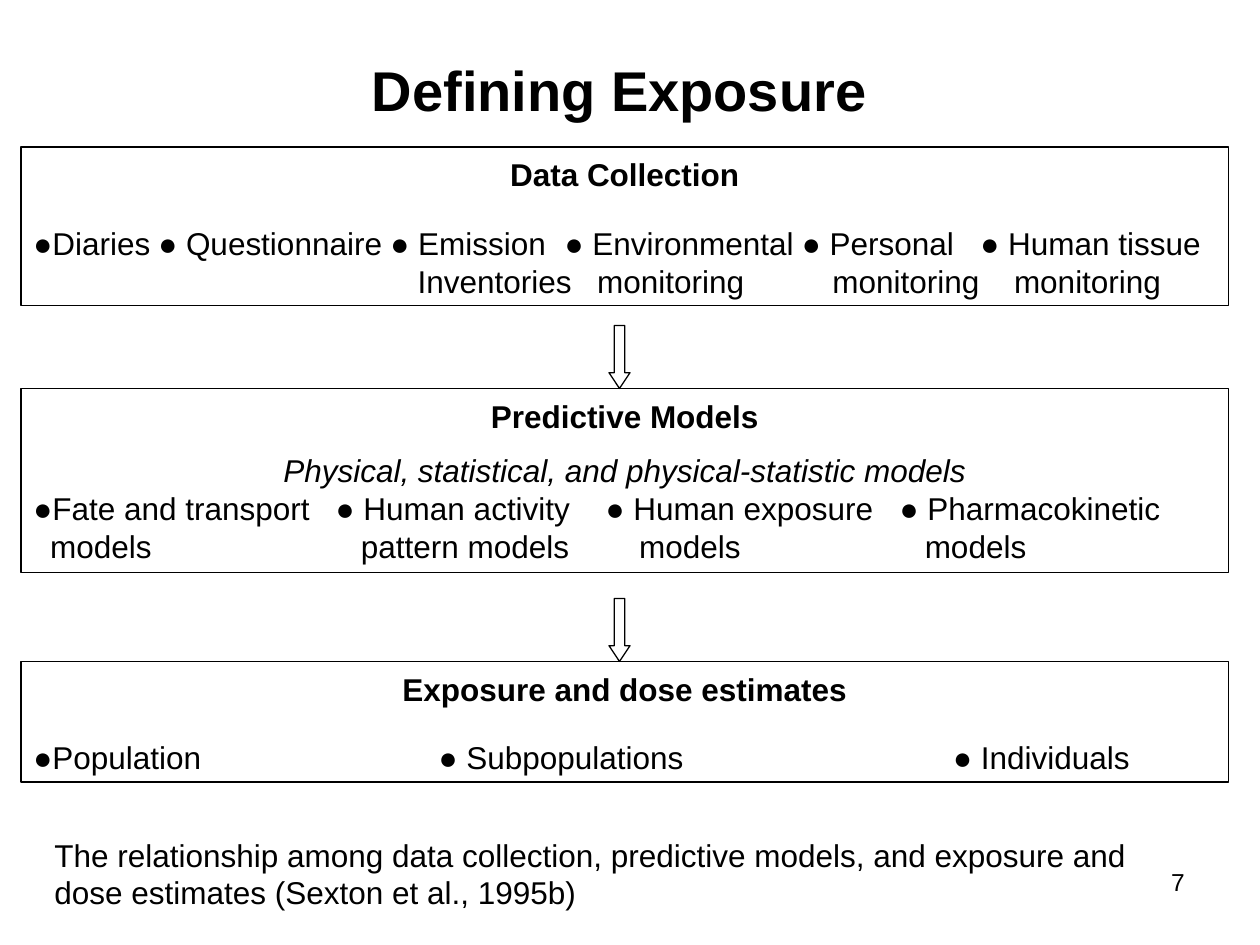
from dataclasses import dataclass

from lxml import etree
from pptx import Presentation
from pptx.dml.color import RGBColor
from pptx.enum import shapes, text
from pptx.oxml import ns
from pptx.util import Pt

PX = 7620  # EMU per px, 120 px to the inch


@dataclass(frozen=True)
class Theme:
    font: str = "Arial"
    ink: RGBColor = RGBColor(0, 0, 0)
    title: int = 32
    body: int = 18
    number: int = 14
    line: float = 0.75


THEME = Theme()
ALIGN = text.PP_ALIGN
BOX_LEFT, BOX_WIDTH = 20, 1150
ARROW_LEFT, ARROW_WIDTH, ARROW_HEIGHT = 580, 20, 60


@dataclass(frozen=True)
class Line:
    """One paragraph; tabs are px from the left edge of the text."""
    words: str
    tabs: tuple = ()
    align: object = ALIGN.LEFT
    before: float = 0
    size: int = THEME.body
    bold: bool = False
    italic: bool = False


def heading(words):
    return Line(words, align=ALIGN.CENTER, bold=True)


def items(*words, tabs, before=0):
    return Line("\t".join(words), tabs=tabs, before=before)


def px(*lengths):
    return [length * PX for length in lengths]


def add_tabs(paragraph, stops):
    tab_list = etree.SubElement(paragraph._p.get_or_add_pPr(), ns.qn("a:tabLst"))
    for stop in stops:
        etree.SubElement(tab_list, ns.qn("a:tab"), pos=str(stop * PX), algn="l")


def write(frame, lines, anchor=text.MSO_ANCHOR.TOP, top=6):
    frame_format = {
        "word_wrap": True, "vertical_anchor": anchor,
        "margin_left": 12 * PX, "margin_right": 12 * PX,
        "margin_top": top * PX, "margin_bottom": 6 * PX,
    }
    for name, value in frame_format.items():
        setattr(frame, name, value)
    for index, line in enumerate(lines):
        paragraph = frame.add_paragraph() if index else frame.paragraphs[0]
        paragraph.alignment = line.align
        if line.before:
            paragraph.space_before = Pt(line.before)
        if line.tabs:
            add_tabs(paragraph, line.tabs)
        run = paragraph.add_run()
        run.text = line.words
        run.font.color.rgb = THEME.ink
        run_format = {"name": THEME.font, "size": Pt(line.size),
                      "bold": line.bold, "italic": line.italic}
        for name, value in run_format.items():
            setattr(run.font, name, value)


def add_outline(slide, kind, *bounds):
    shape = slide.shapes.add_shape(kind, *px(*bounds))
    shape.shadow.inherit = False
    shape.fill.background()
    shape.line.color.rgb = THEME.ink
    shape.line.width = Pt(THEME.line)
    return shape


def add_box(slide, top, height, lines):
    box = add_outline(slide, shapes.MSO_SHAPE.RECTANGLE,
                      BOX_LEFT, top, BOX_WIDTH, height)
    write(box.text_frame, lines, top=8)


def add_arrow_to(slide, box_top):
    arrow = add_outline(slide, shapes.MSO_SHAPE.DOWN_ARROW, ARROW_LEFT,
                        box_top - ARROW_HEIGHT, ARROW_WIDTH, ARROW_HEIGHT)
    arrow.adjustments[0] = 0.5
    arrow.adjustments[1] = 0.75


def add_label(slide, bounds, line):
    write(slide.shapes.add_textbox(*px(*bounds)).text_frame, [line])


def set_title(slide, bounds, words):
    title = slide.shapes.title
    title.left, title.top, title.width, title.height = px(*bounds)
    write(title.text_frame,
          [Line(words, align=ALIGN.CENTER, size=THEME.title, bold=True)],
          anchor=text.MSO_ANCHOR.MIDDLE)


def main():
    presentation = Presentation()
    presentation.slide_width, presentation.slide_height = px(1200, 900)
    slide = presentation.slides.add_slide(presentation.slide_layouts[5])
    set_title(slide, (170, 20, 840, 130), "Defining Exposure")

    # Stages: top, height, lines
    stages = [
        (140, 151, [
            heading("Data Collection"),
            items("●Diaries", "● Questionnaire", "● Emission", "● Environmental",
                  "● Personal", "● Human tissue",
                  tabs=(119, 340, 506, 732, 902), before=17.6),
            items("", "Inventories", "monitoring", "monitoring", "monitoring",
                  tabs=(366, 537, 761, 934)),
        ]),
        (370, 175, [
            heading("Predictive Models"),
            Line("Physical, statistical, and physical-statistic models",
                 align=ALIGN.CENTER, before=9.6, italic=True),
            items("●Fate and transport", "● Human activity", "● Human exposure",
                  "● Pharmacokinetic", tabs=(288, 545, 825)),
            items("", "models", "pattern models", "models", "models",
                  tabs=(16, 312, 577, 849)),
        ]),
        (630, 115, [
            heading("Exposure and dose estimates"),
            items("●Population", "● Subpopulations", "● Individuals",
                  tabs=(386, 876), before=17.6),
        ]),
    ]
    for index, (top, height, lines) in enumerate(stages):
        if index:
            add_arrow_to(slide, top)
        add_box(slide, top, height, lines)

    # Caption and slide number
    add_label(slide, (40, 790, 1080, 84), Line(
        "The relationship among data collection, predictive models, and "
        "exposure and dose estimates (Sexton et al., 1995b)"))
    add_label(slide, (860, 820, 280, 62),
              Line("7", align=ALIGN.RIGHT, size=THEME.number))
    presentation.save("out.pptx")


if __name__ == "__main__":
    main()
